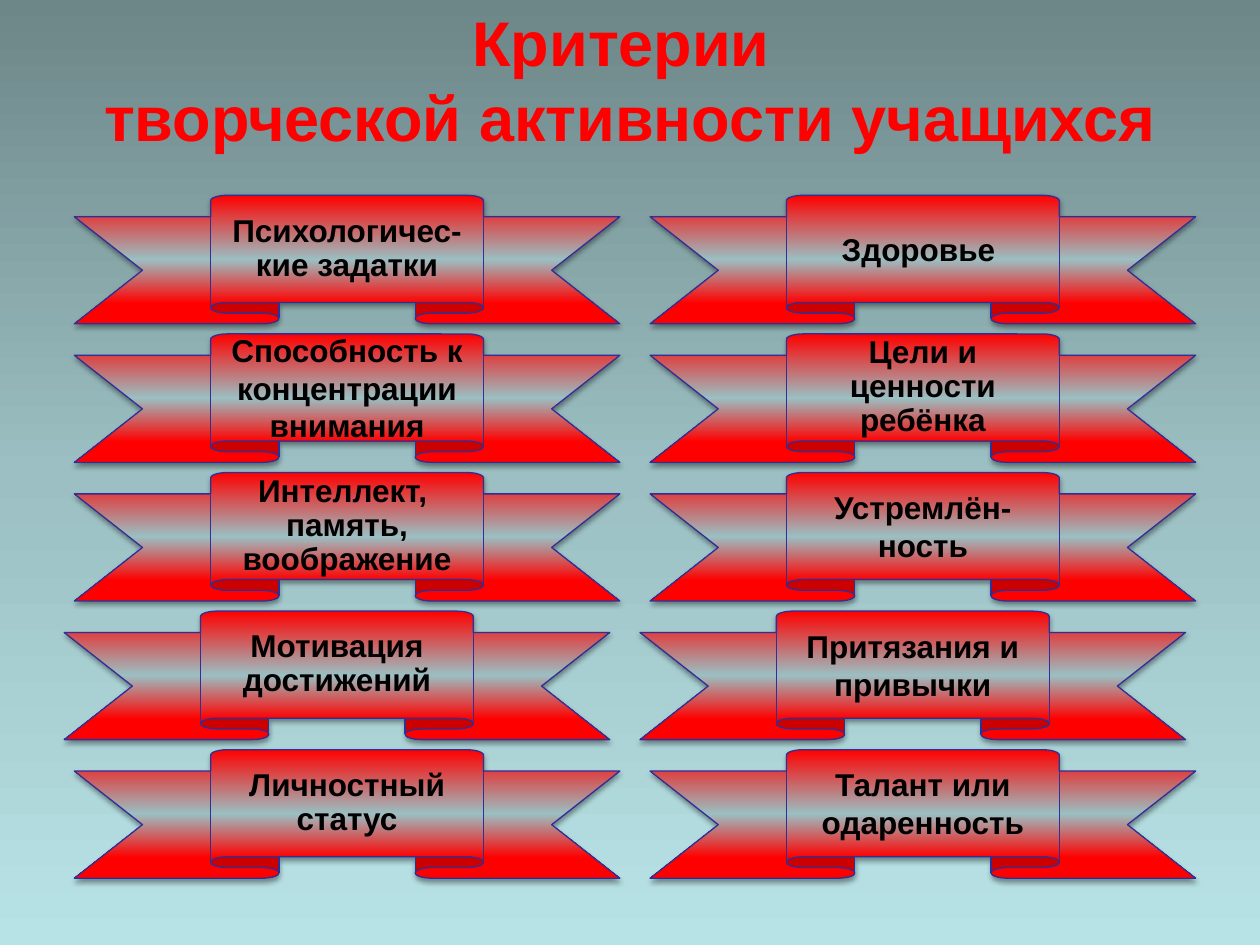
from dataclasses import dataclass

from pptx import Presentation
from pptx.dml.color import RGBColor as Rgb
from pptx.enum.shapes import MSO_SHAPE as Shape
from pptx.enum.text import MSO_ANCHOR as Anchor, PP_ALIGN as Align
from pptx.oxml.ns import qn
from pptx.util import Inches, Pt
from lxml.etree import SubElement


@dataclass(frozen=True)
class Theme:
    font: str = "Arial"
    title_size: int = 36
    label_size: int = 18
    title: str = "FF0000"
    label: str = "000000"
    outline: str = "2F2F98"
    shadow: str = "000000"
    backdrop: tuple = ((0, "6D8688"), (50, "9BBFC2"), (100, "B8E3E6"))
    ribbon: tuple = ((0, "FF0000"), (50, "9BBFC2"), (84, "FF0000"))


@dataclass(frozen=True)
class Grid:
    left: float = 0.59
    top: float = 1.55
    col_step: float = 4.57
    row_step: float = 1.1
    width: float = 4.33
    height: float = 1.02

    def cell(self, col, row, shift):
        x = self.left + col * self.col_step + shift
        y = self.top + row * self.row_step
        return [Inches(v) for v in (x, y, self.width, self.height)]


THEME = Theme()
GRID = Grid()
ROW_SHIFTS = (0, 0, 0, -0.08, 0)
TIGHT = 0.9
COLUMNS = (
    (
        ("Психологичес-кие задатки", TIGHT),
        ("Способность к концентрации внимания", None),
        ("Интеллект, \nпамять, воображение", TIGHT),
        ("Мотивация достижений", TIGHT),
        ("Личностный статус", TIGHT),
    ),
    (
        ("Здоровье ", None),
        ("Цели и ценности ребёнка", TIGHT),
        ("Устремлён-ность", None),
        ("Притязания и привычки", None),
        ("Талант или одаренность", None),
    ),
)


def set_gradient(fill, element, stops):
    fill.gradient()
    fill.gradient_angle = 270
    stop_list = next(element.iter(qn("a:gsLst")))
    for old in list(stop_list):
        stop_list.remove(old)
    for position, color in stops:
        stop = SubElement(stop_list, qn("a:gs"), pos=str(position * 1000))
        SubElement(stop, qn("a:srgbClr"), val=color)


def add_shadow(s):
    s.shadow.inherit = False
    effects = s._element.spPr.find(qn("a:effectLst"))
    shadow = SubElement(
        effects, qn("a:outerShdw"), blurRad=str(Pt(3.1)), dist=str(Pt(1.6)),
        dir="5400000", rotWithShape="0",
    )
    color = SubElement(shadow, qn("a:srgbClr"), val=THEME.shadow)
    SubElement(color, qn("a:alpha"), val="38000")


def write_text(tf, text, size, color, spacing=None):
    tf.text = text
    tf.word_wrap = True
    tf.vertical_anchor = Anchor.MIDDLE
    for p in tf.paragraphs:
        p.alignment = Align.CENTER
        if spacing:
            p.line_spacing = spacing
        p.font.name = THEME.font
        p.font.size = Pt(size)
        p.font.bold = True
        p.font.color.rgb = Rgb.from_string(color)


def add_title(slide, prs, text):
    s = slide.shapes.title
    s.left, s.width = int(prs.slide_width * 0.05), int(prs.slide_width * 0.9)
    s.top, s.height = int(prs.slide_height * 0.04), Inches(1.25)
    write_text(s.text_frame, text, THEME.title_size, THEME.title)


def add_ribbon(slide, box, text, spacing):
    s = slide.shapes.add_shape(Shape.UP_RIBBON, *box)
    set_gradient(s.fill, s._element, THEME.ribbon)
    s.line.color.rgb = Rgb.from_string(THEME.outline)
    s.line.width = Pt(0.75)
    add_shadow(s)
    write_text(s.text_frame, text, THEME.label_size, THEME.label, spacing)


def main():
    prs = Presentation()
    prs.slide_width, prs.slide_height = Inches(10), Inches(7.5)
    slide = prs.slides.add_slide(prs.slide_layouts[5])
    set_gradient(slide.background.fill, slide._element, THEME.backdrop)
    add_title(slide, prs, "Критерии \vтворческой активности учащихся\v")
    for col, labels in enumerate(COLUMNS):
        for row, (text, spacing) in enumerate(labels):
            add_ribbon(slide, GRID.cell(col, row, ROW_SHIFTS[row]), text, spacing)
    prs.save("out.pptx")


if __name__ == "__main__":
    main()
